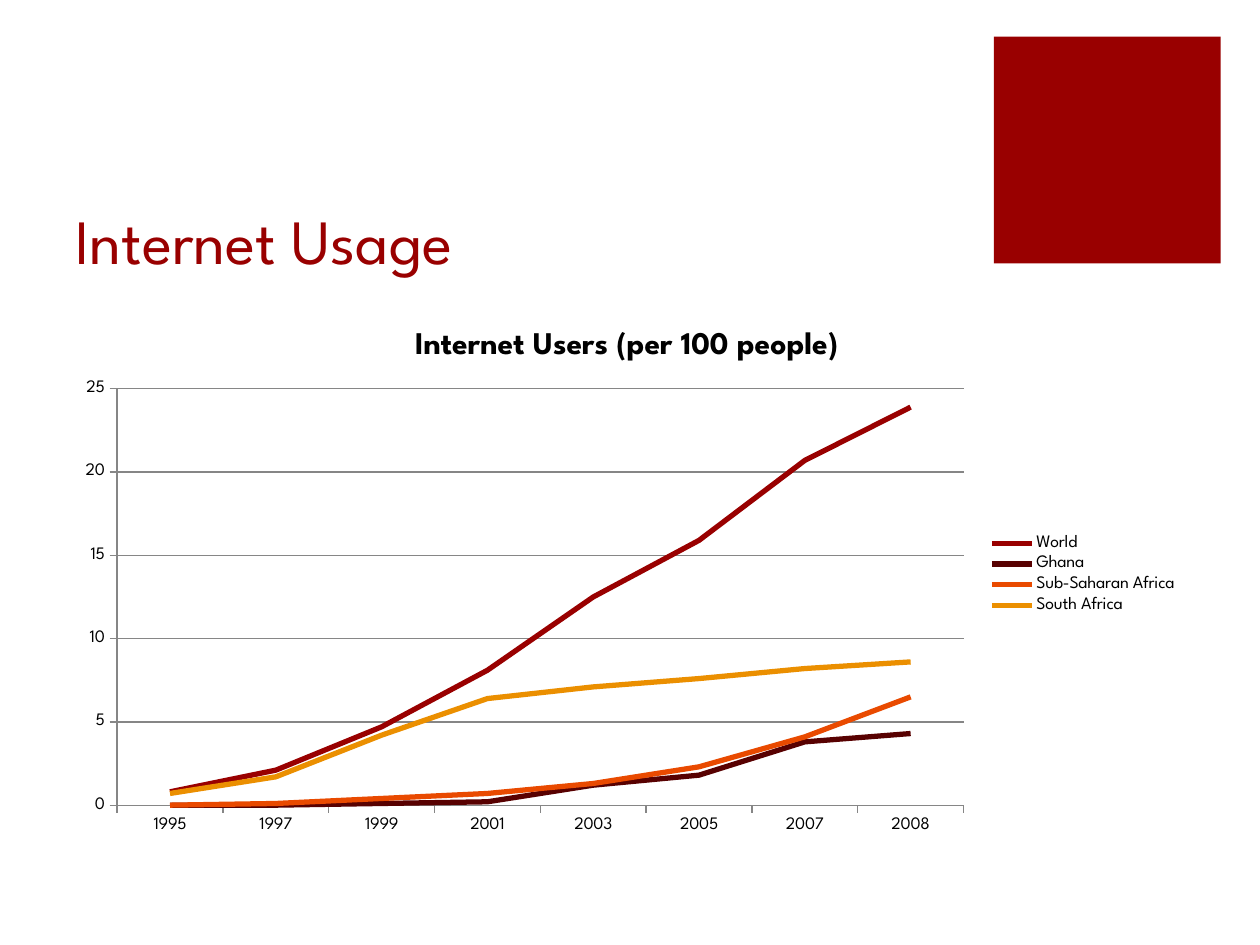
from dataclasses import dataclass

from pptx import Presentation
from pptx.chart.data import CategoryChartData
from pptx.dml.color import RGBColor
from pptx.enum.chart import XL_CHART_TYPE, XL_LEGEND_POSITION, XL_TICK_MARK
from pptx.enum.shapes import MSO_SHAPE
from pptx.enum.text import MSO_ANCHOR
from pptx.util import Pt


@dataclass(frozen=True)
class Theme:
    """Colours, font and type sizes of the slide."""
    font: str = "League Spartan"
    accent: RGBColor = RGBColor(0x99, 0x00, 0x00)
    text: RGBColor = RGBColor(0x00, 0x00, 0x00)
    grid: RGBColor = RGBColor(0x86, 0x86, 0x86)
    series: tuple = ("990000", "580101", "E94A00", "EB8F00")
    title_size: int = 36
    chart_title_size: int = 18
    label_size: int = 10


THEME = Theme()
YEARS = ("1995", "1997", "1999", "2001", "2003", "2005", "2007", "2008")
USERS = {
    "World": (0.8, 2.1, 4.7, 8.1, 12.5, 15.9, 20.7, 23.9),
    "Ghana": (0, 0, 0.1, 0.2, 1.2, 1.8, 3.8, 4.3),
    "Sub-Saharan Africa": (0, 0.1, 0.4, 0.7, 1.3, 2.3, 4.1, 6.5),
    "South Africa": (0.7, 1.7, 4.2, 6.4, 7.1, 7.6, 8.2, 8.6),
}


def style_font(font, size, color, bold=False):
    """Set the theme font with a size, colour and weight."""
    font.name = THEME.font
    font.size = Pt(size)
    font.bold = bold
    font.color.rgb = color


def add_accent_square(s, left, top, side):
    """Place the solid accent square."""
    sp = s.shapes.add_shape(MSO_SHAPE.RECTANGLE, Pt(left), Pt(top), Pt(side), Pt(side))
    sp.shadow.inherit = False
    sp.fill.solid()
    sp.fill.fore_color.rgb = THEME.accent
    sp.line.fill.background()


def add_title(s, left, top, width, height, text):
    """Place the slide title at the bottom of its box."""
    tf = s.shapes.add_textbox(Pt(left), Pt(top), Pt(width), Pt(height)).text_frame
    tf.word_wrap = True
    tf.vertical_anchor = MSO_ANCHOR.BOTTOM
    r = tf.paragraphs[0].add_run()
    r.text = text
    style_font(r.font, THEME.title_size, THEME.accent)


def style_axis(axis):
    """Give an axis grey lines and outside ticks."""
    axis.format.line.color.rgb = THEME.grid
    axis.format.line.width = Pt(0.75)
    axis.major_tick_mark = XL_TICK_MARK.OUTSIDE
    axis.minor_tick_mark = XL_TICK_MARK.NONE
    style_font(axis.tick_labels.font, THEME.label_size, THEME.text)


def add_usage_chart(s, left, top, width, height, title):
    """Place the line chart with its title, axes and legend."""
    data = CategoryChartData()
    data.categories = YEARS
    for name, values in USERS.items():
        data.add_series(name, values)
    chart = s.shapes.add_chart(
        XL_CHART_TYPE.LINE, Pt(left), Pt(top), Pt(width), Pt(height), data
    ).chart
    style_font(chart.font, THEME.label_size, THEME.text)

    r = chart.chart_title.text_frame.paragraphs[0].add_run()
    r.text = title
    style_font(r.font, THEME.chart_title_size, THEME.text, bold=True)
    chart.chart_title.include_in_layout = False

    chart.has_legend = True
    chart.legend.position = XL_LEGEND_POSITION.RIGHT
    chart.legend.include_in_layout = False
    style_font(chart.legend.font, THEME.label_size, THEME.text)

    style_axis(chart.category_axis)
    axis = chart.value_axis
    style_axis(axis)
    axis.minimum_scale, axis.maximum_scale, axis.major_unit = 0, 25, 5
    axis.tick_labels.number_format = "General"
    axis.tick_labels.number_format_is_linked = False
    axis.has_major_gridlines = True
    axis.major_gridlines.format.line.color.rgb = THEME.grid
    axis.major_gridlines.format.line.width = Pt(0.75)

    chart.plots[0].vary_by_categories = False
    for series, color in zip(chart.plots[0].series, THEME.series):
        series.smooth = False
        series.format.line.width = Pt(3)
        series.format.line.color.rgb = RGBColor.from_string(color)


def main():
    """Build the slide and save it."""
    prs = Presentation()
    prs.slide_width, prs.slide_height = Pt(720), Pt(540)
    s = prs.slides.add_slide(prs.slide_layouts[6])
    add_accent_square(s, 568, 21, 129.6)
    add_title(s, 36, 72, 512.6, 90, "Internet Usage")
    add_usage_chart(s, 36, 174.2, 644.4, 308.2, "Internet Users (per 100 people)")
    prs.save("out.pptx")


if __name__ == "__main__":
    main()
